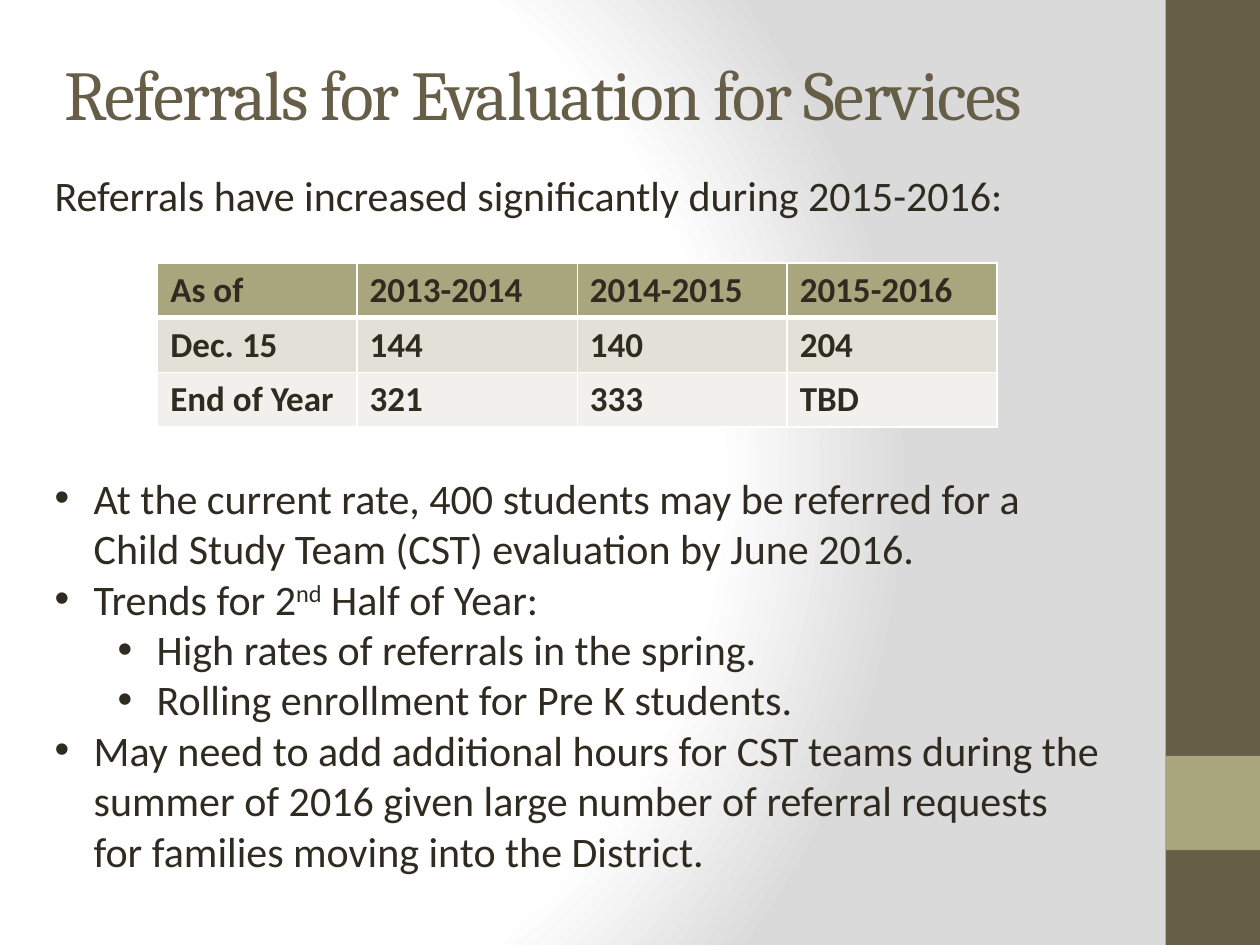
from dataclasses import dataclass

from pptx import Presentation, oxml, util as u
from pptx.dml.color import RGBColor
from pptx.enum import shapes, text
from pptx.oxml import ns


@dataclass(frozen=True)
class Theme:
    brown: str = "675E47"
    olive: str = "A9A57C"
    ink: str = "2F2B20"
    white: str = "FFFFFF"
    grey: str = "DADADA"
    bands: tuple = ("E2E1D7", "F1F0EC")
    heading_font: str = "Cambria"
    body_font: str = "Calibri"
    title_size: int = 40
    body_size: int = 24
    table_size: int = 20


def apply(obj, values):
    for name, value in values.items():
        setattr(obj, name, value)


def box(*lengths):
    return [u.Cm(n) for n in lengths]


class Deck:
    def __init__(self, theme, width, height):
        self.theme = theme
        self.prs = Presentation()
        apply(self.prs, {"slide_width": u.Cm(width), "slide_height": u.Cm(height)})
        self.s = self.prs.slides.add_slide(self.prs.slide_layouts[6])

    def background(self, stops, rect):
        self.s.background.fill.solid()
        solid = next(self.s.element.iter(ns.qn("a:solidFill")))
        gs = "".join(
            f'<a:gs pos="{pos * 1000}"><a:srgbClr val="{color}"/></a:gs>'
            for pos, color in stops
        )
        sides = " ".join(f'{side}="{n * 1000}"' for side, n in zip("ltrb", rect))
        grad = oxml.parse_xml(
            f'<a:gradFill {ns.nsdecls("a")} rotWithShape="1"><a:gsLst>{gs}</a:gsLst>'
            f'<a:path path="circle"><a:fillToRect {sides}/></a:path></a:gradFill>'
        )
        solid.getparent().replace(solid, grad)

    def rect(self, at, color):
        sp = self.s.shapes.add_shape(shapes.MSO_SHAPE.RECTANGLE, *box(*at))
        sp.shadow.inherit = False
        sp.fill.solid()
        sp.fill.fore_color.rgb = RGBColor.from_string(color)
        sp.line.fill.background()

    def run(self, p, words, color, **font):
        r = p.add_run()
        r.text = words
        apply(r.font, font)
        r.font.color.rgb = RGBColor.from_string(color)
        return r

    def frame(self, at, **values):
        tf = self.s.shapes.add_textbox(*box(*at)).text_frame
        apply(tf, {"word_wrap": True, "vertical_anchor": text.MSO_ANCHOR.TOP, **values})
        return tf

    def title(self, at, words):
        t = self.theme
        tf = self.frame(at, margin_top=u.Cm(0.25))
        r = self.run(tf.paragraphs[0], words, t.brown,
                     name=t.heading_font, size=u.Pt(t.title_size))
        r.font._element.set("spc", "-100")

    def body(self, at, intro, gap, bullets):
        t = self.theme
        tf = self.frame(at)
        font = {"name": t.body_font, "size": u.Pt(t.body_size)}
        self.run(tf.paragraphs[0], intro, t.ink, **font)
        for i, (level, parts) in enumerate(bullets):
            p = tf.add_paragraph()
            apply(p, {"level": level, "space_before": u.Pt(0 if i else gap)})
            pPr = p._p.get_or_add_pPr()
            pPr.set("marL", str(u.Cm(0.79 + 1.27 * level)))
            pPr.set("indent", str(u.Cm(-0.79)))
            for tag, key, value in (("buFont", "typeface", "Arial"), ("buChar", "char", "•")):
                pPr.append(oxml.parse_xml(f'<a:{tag} {ns.nsdecls("a")} {key}="{value}"/>'))
            for j, words in enumerate(parts):
                r = self.run(p, words, t.ink, **font)
                if j % 2:
                    r.font._element.set("baseline", "30000")

    def borders(self, cell, widths):
        tcPr = cell._tc.get_or_add_tcPr()
        for i, (side, width) in enumerate(zip("LRTB", widths)):
            tcPr.insert(i, oxml.parse_xml(
                f'<a:ln{side} {ns.nsdecls("a")} w="{u.Pt(width)}"><a:solidFill>'
                f'<a:srgbClr val="{self.theme.white}"/></a:solidFill></a:ln{side}>'
            ))

    def table(self, left, top, col_widths, row_height, rows):
        t = self.theme
        at = box(left, top, sum(col_widths), row_height * len(rows))
        tbl = self.s.shapes.add_table(len(rows), len(col_widths), *at).table
        for col, width in zip(tbl.columns, col_widths):
            col.width = u.Cm(width)
        for i, (values, fill) in enumerate(zip(rows, (t.olive, *t.bands))):
            tbl.rows[i].height = u.Cm(row_height)
            for j, words in enumerate(values):
                cell = tbl.cell(i, j)
                cell.fill.solid()
                cell.fill.fore_color.rgb = RGBColor.from_string(fill)
                self.run(cell.text_frame.paragraphs[0], words, t.ink,
                         name=t.body_font, size=u.Pt(t.table_size), bold=True)
                self.borders(cell, (1, 1, 3 if i == 1 else 1, 3 if i == 0 else 1))


def main():
    t = Theme()
    deck = Deck(t, 25.4, 19.05)
    deck.background([(0, t.white), (75, t.white), (100, t.grey)], (20, 50, 100, 50))
    deck.rect((23.5, 0, 1.9, 19.05), t.brown)
    deck.rect((23.5, 15.24, 1.9, 1.9), t.olive)
    deck.body(
        (0.85, 3.3, 21.59, 14.63),
        "Referrals have increased significantly during 2015-2016:",
        144,
        [
            (0, ["At the current rate, 400 students may be referred for a "
                 "Child Study Team (CST) evaluation by June 2016."]),
            (0, ["Trends for 2", "nd", " Half of Year:"]),
            (1, ["High rates of referrals in the spring."]),
            (1, ["Rolling enrollment for Pre K students."]),
            (0, ["May need to add additional hours for CST teams during the "
                 "summer of 2016 given large number of referral requests "
                 "for families moving into the District."]),
        ],
    )
    deck.title((1.06, 0.76, 21.17, 2.54), "Referrals for Evaluation for Services")
    deck.table(3.18, 5.3, (4.02, 4.44, 4.23, 4.23), 1.1, [
        ("As of", "2013-2014", "2014-2015", "2015-2016"),
        ("Dec. 15", "144", "140", "204"),
        ("End of Year", "321", "333", "TBD"),
    ])
    deck.prs.save("out.pptx")


if __name__ == "__main__":
    main()
